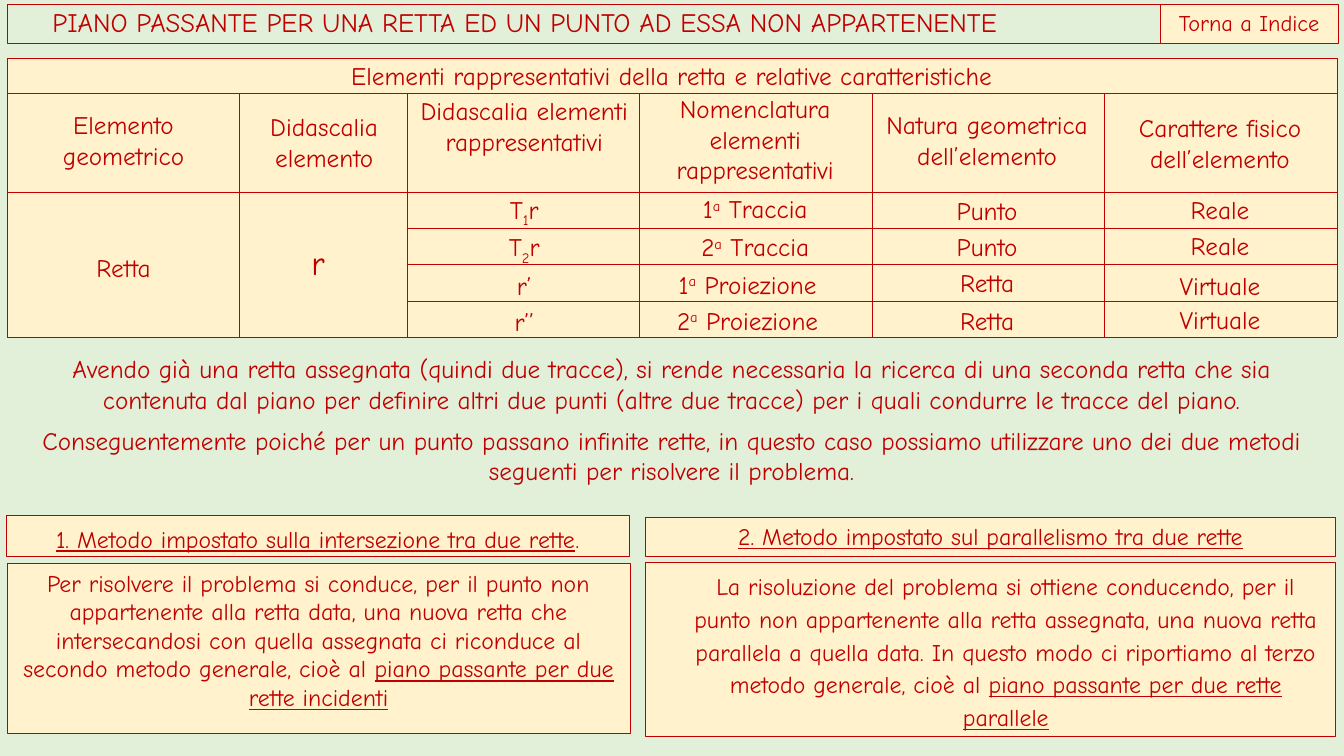
from pptx import Presentation
from pptx.dml.color import RGBColor
from pptx.enum import shapes, text
from pptx.oxml import parse_xml
from pptx.oxml.ns import nsdecls
from pptx.util import Inches, Pt

COLORS = {"ground": "E2F0D9", "panel": "FFF2CC", "ink": "C00000"}
FONT = "Comic Neue"
TOP, MID = text.MSO_ANCHOR.TOP, text.MSO_ANCHOR.MIDDLE
LEFT, CENTER = text.PP_ALIGN.LEFT, text.PP_ALIGN.CENTER


def rgb(name):
    return RGBColor.from_string(COLORS[name])


def write(frame, words, size=18, align=CENTER, line=None, mark=None):
    """Fill a frame; parts between bars are underlined, or raised by mark."""
    frame.word_wrap = True
    para = frame.paragraphs[0]
    para.alignment = align
    if line:
        para.line_spacing = line
    for i, part in enumerate(words.split("|")):
        if not part:
            continue
        run = para.add_run()
        run.text = part
        run.font.name, run.font.size = FONT, Pt(size)
        run.font.color.rgb = rgb("ink")
        if i % 2 and mark:
            run._r.get_or_add_rPr().set("baseline", str(mark))
        elif i % 2:
            run.font.underline = True


deck = Presentation()
deck.slide_width, deck.slide_height = Inches(13.33), Inches(7.5)
slide = deck.slides.add_slide(deck.slide_layouts[6])
slide.background.fill.solid()
slide.background.fill.fore_color.rgb = rgb("ground")

# Title bar, index button and the two method panels
panels = [
    ((0.07, 0.04, 13.19, 0.39), None, 0.25, MID, 0.45,
     "PIANO PASSANTE PER UNA RETTA ED UN PUNTO AD ESSA NON APPARTENENTE",
     dict(size=19, align=LEFT, line=0.9)),
    ((11.51, 0.04, 1.76, 0.39), "panel", 0.25, TOP, 0.1,
     "Torna a Indice", dict(size=16)),
    ((0.06, 5.11, 6.18, 0.41), "panel", 0.75, TOP, 0.1,
     "|1. Metodo impostato sulla intersezione tra due rette|.",
     dict(size=17, line=1.15)),
    ((0.07, 5.59, 6.18, 1.69), "panel", 0.75, TOP, 0.1,
     "Per risolvere il problema si conduce, per il punto non appartenente "
     "alla retta data, una nuova retta che intersecandosi con quella "
     "assegnata ci riconduce al secondo metodo generale, cioè al "
     "|piano passante per due rette incidenti|", dict(size=17)),
    ((6.4, 5.13, 6.85, 0.39), "panel", 0.75, TOP, 0.1,
     "|2. Metodo impostato sul parallelismo tra due rette|", dict(size=17)),
    ((6.4, 5.58, 6.85, 1.73), "panel", 0.75, TOP, 0.4,
     "La risoluzione del problema si ottiene conducendo, per il punto non "
     "appartenente alla retta assegnata, una nuova retta parallela a quella "
     "data. In questo modo ci riportiamo al terzo metodo generale, cioè al "
     "|piano passante per due rette parallele|", dict(size=17, line=1.15)),
]
for place, fill, width, anchor, inset, words, form in panels:
    box = slide.shapes.add_shape(
        shapes.MSO_SHAPE.RECTANGLE, *[Inches(n) for n in place])
    box.shadow.inherit = False
    if fill:
        box.fill.solid()
        box.fill.fore_color.rgb = rgb(fill)
    else:
        box.fill.background()
    box.line.color.rgb = rgb("ink")
    box.line.width = Pt(width)
    box.text_frame.vertical_anchor = anchor
    box.text_frame.margin_left = Inches(inset)
    write(box.text_frame, words, **form)

# Table grid that frames the labels
cols = [2.3, 1.67, 2.3, 2.31, 2.3, 2.31]
rows = [0.34, 0.98] + [0.36] * 4
holder = slide.shapes.add_table(
    len(rows), len(cols), Inches(0.07), Inches(0.58),
    Inches(sum(cols)), Inches(sum(rows)))
table = holder.table
table.first_row = table.horz_banding = False
for col, width in zip(table.columns, cols):
    col.width = Inches(width)
for row, height in zip(table.rows, rows):
    row.height = Inches(height)
table.cell(0, 0).merge(table.cell(0, 5))
for c in (0, 1):
    table.cell(2, c).merge(table.cell(5, c))

for cell in table.iter_cells():
    cell.margin_top = cell.margin_bottom = Inches(0.02)
    props = cell._tc.get_or_add_tcPr()
    for side in ("lnL", "lnR", "lnT", "lnB"):
        props.append(parse_xml(
            f'<a:{side} {nsdecls("a")} w="{Pt(0.25)}"><a:solidFill>'
            f'<a:srgbClr val="{COLORS["ink"]}"/></a:solidFill></a:{side}>'))
    cell.fill.solid()
    cell.fill.fore_color.rgb = rgb("panel")

# Labels by column: left, width, format, then top and words
labels = [
    (0.07, 13.18, {}, [
        (0.55, "Elementi rappresentativi della retta e relative "
               "caratteristiche"),
        (3.46, "Avendo già una retta assegnata (quindi due tracce), si rende "
               "necessaria la ricerca di una seconda retta che sia contenuta "
               "dal piano per definire altri due punti (altre due tracce) "
               "per i quali condurre le tracce del piano."),
        (4.17, "Conseguentemente poiché per un punto passano infinite rette, "
               "in questo caso possiamo utilizzare uno dei due metodi "
               "seguenti per risolvere il problema.")]),
    (0.07, 2.31, {}, [(1.04, "Elemento geometrico"), (2.45, "Retta")]),
    (2.38, 1.67, {}, [(1.06, "Didascalia elemento")]),
    (2.99, 0.44, dict(size=24, align=LEFT), [(2.35, "r")]),
    (4.05, 2.3, dict(mark=-25000), [
        (0.9, "Didascalia elementi rappresentativi"),
        (1.88, "T|1|r"), (2.25, "T|2|r"), (2.63, "r’"), (2.99, "r’’")]),
    (6.35, 2.28, dict(mark=30000), [
        (0.88, "Nomenclatura elementi rappresentativi"),
        (1.87, "1|a| Traccia"), (2.25, "2|a| Traccia"),
        (2.62, "1|a| Proiezione"), (2.98, "2|a| Proiezione")]),
    (8.64, 2.3, {}, [
        (1.04, "Natura geometrica dell’elemento"),
        (1.89, "Punto"), (2.25, "Punto"), (2.6, "Retta"), (2.98, "Retta")]),
    (10.96, 2.28, {}, [
        (1.07, "Carattere fisico dell’elemento"),
        (1.88, "Reale"), (2.24, "Reale"),
        (2.63, "Virtuale"), (2.97, "Virtuale")]),
]
for left, width, form, items in labels:
    for top, words in items:
        box = slide.shapes.add_textbox(
            Inches(left), Inches(top), Inches(width), Inches(0.4))
        if "Proiezione" in words:
            box.text_frame.margin_right = Inches(0.25)
        write(box.text_frame, words, **form)
        box.text_frame.auto_size = text.MSO_AUTO_SIZE.SHAPE_TO_FIT_TEXT

deck.save("out.pptx")
